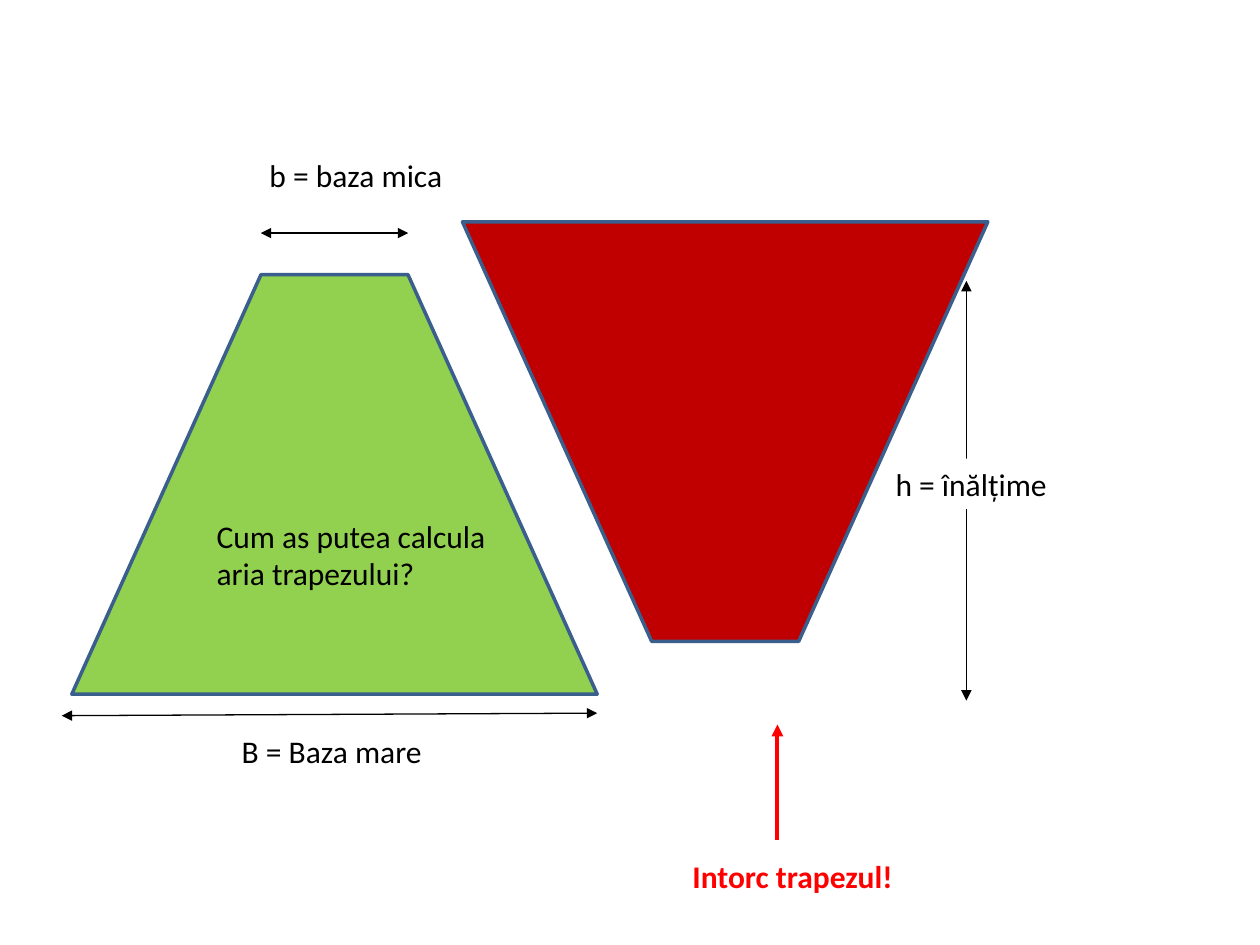
from typing import NamedTuple, Optional

from lxml import etree
from pptx import Presentation
from pptx.dml.color import RGBColor
from pptx.enum.shapes import MSO_CONNECTOR as Connector, MSO_SHAPE as Shape
from pptx.enum.text import MSO_ANCHOR as Anchor, PP_ALIGN as Align
from pptx.oxml.ns import qn
from pptx.util import Inches, Pt

FONT = "Calibri"
BLACK, WHITE, RED = "000000", "FFFFFF", "FF0000"
GREEN, DARK_RED, OUTLINE = "92D050", "C00000", "3A5F8C"
BASE, HEIGHT, SLANT = 4.17, 3.33, 0.451


class Trapezoid(NamedTuple):
    left: float
    top: float
    fill: str
    rotation: int = 0


class Arrow(NamedTuple):
    start: tuple[float, float]
    end: tuple[float, float]
    color: str = BLACK
    width: float = 0.75
    both_ends: bool = True


class Label(NamedTuple):
    text: str
    left: float
    top: float
    width: float
    height: float = 0.4
    fill: Optional[str] = WHITE
    color: str = BLACK
    bold: bool = False
    align: Align = Align.LEFT


def rgb(value: str) -> RGBColor:
    return RGBColor.from_string(value)


def draw_trapezoid(slide, item: Trapezoid) -> None:
    shape = slide.shapes.add_shape(Shape.TRAPEZOID, Inches(item.left), Inches(item.top),
                                   Inches(BASE), Inches(HEIGHT))
    shape.adjustments[0] = SLANT
    shape.rotation = item.rotation
    shape.shadow.inherit = False
    shape.fill.solid()
    shape.fill.fore_color.rgb = rgb(item.fill)
    shape.line.color.rgb = rgb(OUTLINE)
    shape.line.width = Pt(2)
    etree.SubElement(shape.line._get_or_add_ln(), qn("a:round"))


def draw_arrow(slide, item: Arrow) -> None:
    arrow = slide.shapes.add_connector(Connector.STRAIGHT, *map(Inches, item.start + item.end))
    arrow.line.color.rgb = rgb(item.color)
    arrow.line.width = Pt(item.width)
    # Arrowheads
    line = arrow.line._get_or_add_ln()
    for end in ("a:headEnd", "a:tailEnd") if item.both_ends else ("a:tailEnd",):
        etree.SubElement(line, qn(end), type="triangle")
    etree.SubElement(arrow._element.spPr, qn("a:effectLst"))


def draw_label(slide, item: Label) -> None:
    box = slide.shapes.add_textbox(Inches(item.left), Inches(item.top),
                                   Inches(item.width), Inches(item.height))
    if item.fill:
        box.fill.solid()
        box.fill.fore_color.rgb = rgb(item.fill)
    frame = box.text_frame
    frame.word_wrap = True
    frame.vertical_anchor = Anchor.TOP
    frame.text = item.text
    paragraph = frame.paragraphs[0]
    paragraph.alignment = item.align
    font = paragraph.runs[0].font
    font.name, font.size, font.bold = FONT, Pt(18), item.bold
    font.color.rgb = rgb(item.color)


ARROWS = [
    Arrow((6.17, 6.67), (6.17, 5.75), RED, 2.25, both_ends=False),
    Arrow((7.67, 2.23), (7.67, 5.56)),
    Arrow((4.74, 5.66), (0.49, 5.68)),
    Arrow((3.24, 1.85), (2.07, 1.85)),
]
LABELS = [
    Label("Intorc trapezul!", 4.58, 6.75, 3.42, fill=None, color=RED, bold=True,
          align=Align.CENTER),
    Label("b = baza mica", 2.04, 1.19, 2.08),
    Label("B = Baza mare", 1.82, 5.76, 2.08),
    Label("h = înălțime", 7.01, 3.64, 1.67),
]
UPRIGHT = Trapezoid(0.57, 2.18, GREEN)
TURNED = Trapezoid(3.67, 1.76, DARK_RED, rotation=180)
QUESTION = Label("Cum as putea calcula aria trapezului?", 1.62, 4.05, 2.42, 0.71, fill=None)


def main() -> None:
    deck = Presentation()
    deck.slide_width, deck.slide_height = Inches(10), Inches(7.5)
    slide = deck.slides.add_slide(deck.slide_layouts[6])

    # Dimension arrows, with the labels interrupting them
    for arrow in ARROWS:
        draw_arrow(slide, arrow)
    draw_trapezoid(slide, UPRIGHT)
    for label in LABELS:
        draw_label(slide, label)

    # Turned trapezoid and the question lie on top
    draw_trapezoid(slide, TURNED)
    draw_label(slide, QUESTION)

    deck.save("out.pptx")


if __name__ == "__main__":
    main()
